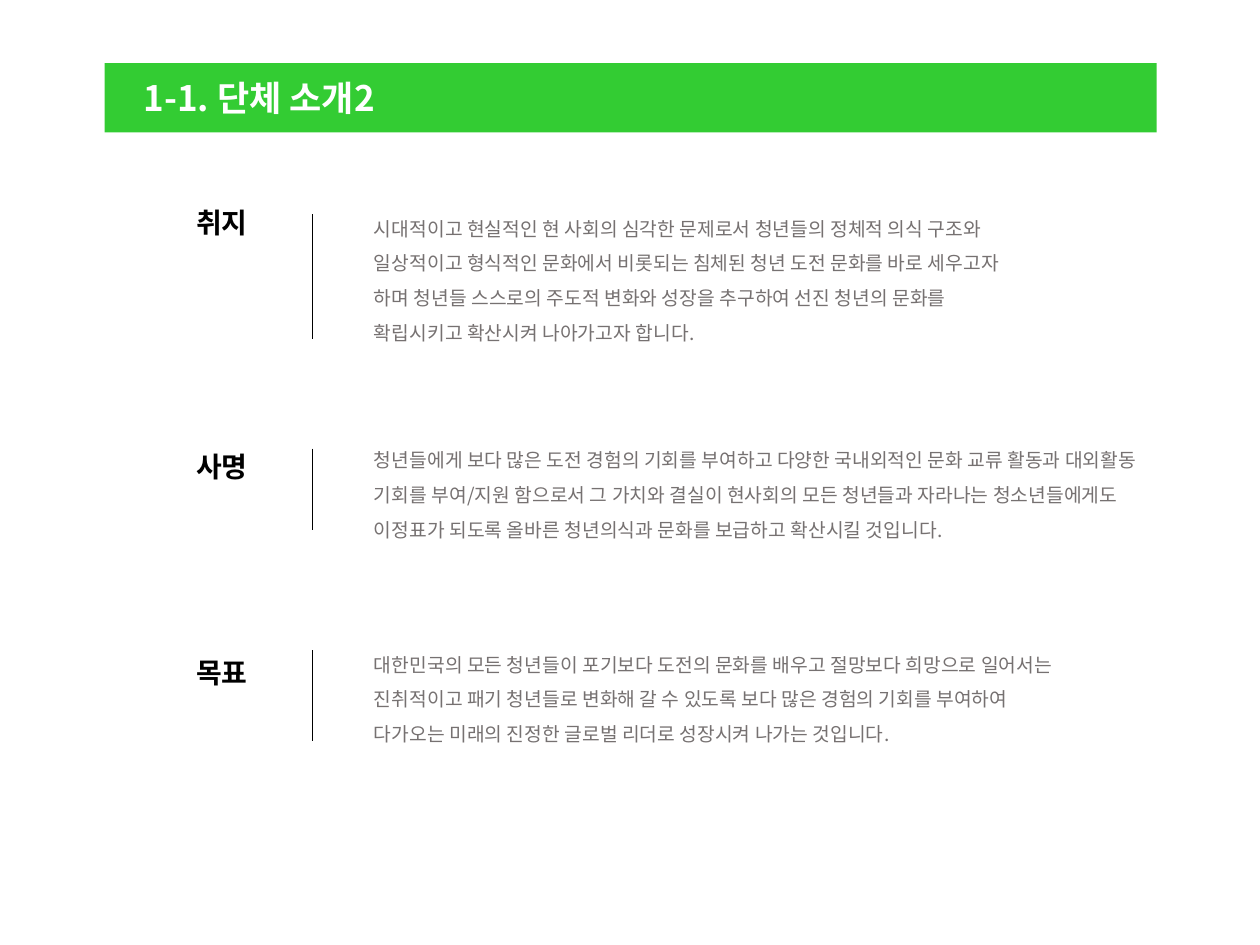
from lxml import etree
from pptx import Presentation
from pptx import util as u
from pptx.dml.color import RGBColor
from pptx.enum import shapes, text
from pptx.oxml import ns

GREEN = RGBColor(0x33, 0xCC, 0x33)
WHITE = RGBColor(0xFF, 0xFF, 0xFF)
BLACK = RGBColor(0, 0, 0)
GRAY = RGBColor(0x76, 0x71, 0x71)

LABEL_LEFT, RULE_X, BODY_LEFT = 1.46, 2.48, 2.87

# Each section: label, label top, rule top and bottom, body top and height, lines
SECTIONS = [
    ("취지", 1.58, (1.7, 2.69), (1.58, 1.18), [
        "시대적이고 현실적인 현 사회의 심각한 문제로서 청년들의 정체적 의식 구조와",
        "일상적이고 형식적인 문화에서 비롯되는 침체된 청년 도전 문화를 바로 세우고자",
        "하며 청년들 스스로의 주도적 변화와 성장을 추구하여 선진 청년의 문화를",
        "확립시키고 확산시켜 나아가고자 합니다.",
    ]),
    ("사명", 3.52, (3.56, 4.21), (3.42, 1.18), [
        "청년들에게 보다 많은 도전 경험의 기회를 부여하고 다양한 국내외적인 문화 교류 활동과 "
        "대외활동 기회를 부여/지원 함으로서 그 가치와 결실이 현사회의 모든 청년들과 자라나는 "
        "청소년들에게도 이정표가 되도록 올바른 청년의식과 문화를 보급하고 확산시킬 것입니다.",
    ]),
    ("목표", 5.15, (5.16, 5.88), (5.04, 0.93), [
        "대한민국의 모든 청년들이 포기보다 도전의 문화를 배우고 절망보다 희망으로 일어서는",
        "진취적이고 패기 청년들로 변화해 갈 수 있도록 보다 많은 경험의 기회를 부여하여",
        "다가오는 미래의 진정한 글로벌 리더로 성장시켜 나가는 것입니다.",
    ]),
]


class SlideWriter:
    font = "Noto Sans CJK KR"

    def __init__(self, slide):
        self.slide = slide

    def bar(self, left, top, width, height, color):
        bar = self.slide.shapes.add_shape(
            shapes.MSO_SHAPE.RECTANGLE,
            *map(u.Inches, (left, top, width, height)))
        bar.shadow.inherit = False
        bar.fill.solid()
        bar.fill.fore_color.rgb = color
        bar.line.fill.background()

    def rule(self, x, top, bottom):
        rule = self.slide.shapes.add_connector(
            shapes.MSO_CONNECTOR.STRAIGHT,
            *map(u.Inches, (x, top, x, bottom)))
        rule.line.color.rgb = BLACK
        rule.line.width = u.Pt(0.5)
        etree.SubElement(rule._element.spPr, ns.qn("a:effectLst"))

    def text(self, left, top, width, height, lines, size, color,
             bold=False, spacing=None):
        box = self.slide.shapes.add_textbox(
            *map(u.Inches, (left, top, width, height)))
        frame = box.text_frame
        frame.word_wrap = True
        frame.auto_size = text.MSO_AUTO_SIZE.SHAPE_TO_FIT_TEXT
        frame.text = "\n".join(lines)
        for paragraph in frame.paragraphs:
            paragraph.line_spacing = spacing
            for run in paragraph.runs:
                run.font.size = u.Pt(size)
                run.font.bold = bold
                run.font.color.rgb = color
                run.font.name = self.font
                # Hangul takes its font from the East Asian slot
                etree.SubElement(run.font._element, ns.qn("a:ea"),
                                 typeface=self.font)


def main():
    deck = Presentation()
    deck.slide_width, deck.slide_height = u.Inches(10), u.Inches(7.5)
    writer = SlideWriter(deck.slides.add_slide(deck.slide_layouts[6]))

    # Title bar
    writer.bar(0.83, 0.5, 8.35, 0.55, GREEN)
    writer.text(1.04, 0.56, 2.3, 0.44, ["1-1. 단체 소개2"], 20, WHITE, bold=True)

    # Purpose, mission and goal
    for label, label_top, rule_span, (body_top, body_height), lines in SECTIONS:
        writer.text(LABEL_LEFT, label_top, 0.71, 0.37, [label], 16, BLACK, bold=True)
        writer.rule(RULE_X, *rule_span)
        writer.text(BODY_LEFT, body_top, 6.3, body_height, lines, 11, GRAY, spacing=1.5)

    deck.save("out.pptx")


if __name__ == "__main__":
    main()
